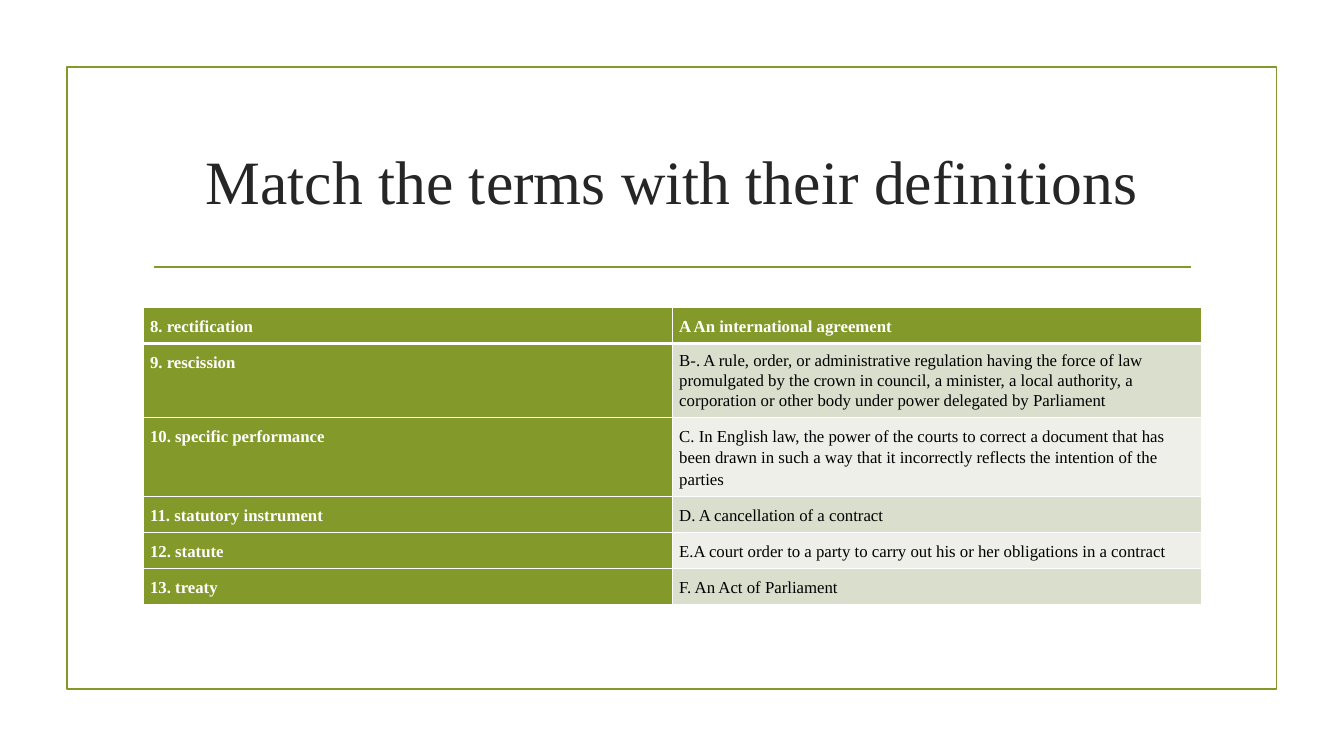
from dataclasses import dataclass

from lxml import etree
from pptx import Presentation
from pptx.dml.color import RGBColor
from pptx.enum.shapes import MSO_CONNECTOR, MSO_SHAPE
from pptx.enum.text import MSO_ANCHOR, MSO_AUTO_SIZE, PP_ALIGN
from pptx.oxml.ns import qn
from pptx.util import Pt

RECTANGLE = MSO_SHAPE.RECTANGLE
STRAIGHT = MSO_CONNECTOR.STRAIGHT
MIDDLE = MSO_ANCHOR.MIDDLE
TOP = MSO_ANCHOR.TOP
CENTER = PP_ALIGN.CENTER
LEFT = PP_ALIGN.LEFT
NO_AUTOFIT = MSO_AUTO_SIZE.NONE


@dataclass(frozen=True)
class Theme:
    font: str = "Times New Roman"
    title_size: float = 44
    cell_size: float = 12
    green: str = "83992A"
    title_ink: str = "262626"
    ink: str = "000000"
    white: str = "FFFFFF"
    bands: tuple[str, str] = ("EDEFE8", "D9DECD")
    rule_width: float = 1.25
    grid_width: float = 1
    header_rule_width: float = 3


@dataclass(frozen=True)
class Entry:
    term: str
    definition: str
    height: float = 25.9
    line_spacing: float = 1.15
    space_after: float = 0


THEME = Theme()
CONTENT_LEFT = 102.2
CONTENT_WIDTH = 756
CELL_MARGIN = 5

ENTRIES = (
    Entry("8. rectification", "A An international agreement", 25.5),
    Entry(
        "9. rescission",
        "B-. A rule, order, or administrative regulation having the force of law "
        "promulgated by the crown in council, a minister, a local authority, a "
        "corporation or other body under power delegated by Parliament",
        52.9, 1.07, 8,
    ),
    Entry(
        "10. specific performance",
        "C. In English law, the power of the courts to correct a document that has "
        "been drawn in such a way that it incorrectly reflects the intention of the "
        "parties",
        56.4,
    ),
    Entry("11. statutory instrument", "D. A cancellation of a contract"),
    Entry(
        "12. statute",
        "E.A court order to a party to carry out his or her obligations in a contract",
    ),
    Entry("13. treaty", "F. An Act of Parliament"),
)


def color(value: str) -> RGBColor:
    return RGBColor.from_string(value)


def style_font(para, size: float, ink: str, bold: bool = False) -> None:
    para.font.name = THEME.font
    para.font.size = Pt(size)
    para.font.bold = bold
    para.font.color.rgb = color(ink)


def style_line(line) -> None:
    line.color.rgb = color(THEME.green)
    line.width = Pt(THEME.rule_width)


def draw_frame(page) -> None:
    frame = page.shapes.add_shape(RECTANGLE, Pt(47.8), Pt(48), Pt(864), Pt(444))
    frame.shadow.inherit = False
    frame.fill.background()
    style_line(frame.line)


def draw_title_rule(page) -> None:
    rule = page.shapes.add_connector(STRAIGHT, Pt(110), Pt(190.8), Pt(850.5), Pt(190.8))
    style_line(rule.line)
    etree.SubElement(rule._element.spPr, qn("a:effectLst"))


def write_title(page) -> None:
    title = page.shapes.title
    title.left, title.top = Pt(CONTENT_LEFT), Pt(77)
    title.width, title.height = Pt(CONTENT_WIDTH), Pt(103)
    frame = title.text_frame
    frame.text = "Match the terms with their definitions"
    frame.word_wrap = True
    frame.auto_size = NO_AUTOFIT
    frame.vertical_anchor = MIDDLE
    para = frame.paragraphs[0]
    para.alignment = CENTER
    style_font(para, THEME.title_size, THEME.title_ink)


def add_borders(cell, top: float, bottom: float) -> None:
    properties = cell._tc.get_or_add_tcPr()
    widths = {"lnL": THEME.grid_width, "lnR": THEME.grid_width, "lnT": top, "lnB": bottom}
    for tag, width in widths.items():
        border = etree.SubElement(properties, qn(f"a:{tag}"), w=str(Pt(width)))
        fill = etree.SubElement(border, qn("a:solidFill"))
        etree.SubElement(fill, qn("a:srgbClr"), val=THEME.white)


def fill_cell(cell, text: str, entry: Entry, row: int, heading: bool) -> None:
    add_borders(
        cell,
        THEME.header_rule_width if row == 1 else THEME.grid_width,
        THEME.header_rule_width if row == 0 else THEME.grid_width,
    )
    cell.fill.solid()
    cell.fill.fore_color.rgb = color(THEME.green if heading else THEME.bands[row % 2])
    cell.margin_left = cell.margin_right = Pt(CELL_MARGIN)
    cell.margin_top = cell.margin_bottom = Pt(CELL_MARGIN)
    cell.vertical_anchor = TOP
    cell.text = text
    para = cell.text_frame.paragraphs[0]
    para.alignment = LEFT
    para.line_spacing = 1.15 if heading else entry.line_spacing
    para.space_after = Pt(0 if heading else entry.space_after)
    style_font(para, THEME.cell_size, THEME.white if heading else THEME.ink, heading)


def draw_terms(page) -> None:
    height = sum(entry.height for entry in ENTRIES)
    table = page.shapes.add_table(
        len(ENTRIES), 2, Pt(CONTENT_LEFT), Pt(219.8), Pt(CONTENT_WIDTH), Pt(height)
    ).table
    table.horz_banding = False
    for column in table.columns:
        column.width = Pt(CONTENT_WIDTH / 2)
    for row, entry in enumerate(ENTRIES):
        table.rows[row].height = Pt(entry.height)
        fill_cell(table.cell(row, 0), entry.term, entry, row, True)
        fill_cell(table.cell(row, 1), entry.definition, entry, row, row == 0)


def main() -> None:
    deck = Presentation()
    deck.slide_width, deck.slide_height = Pt(960), Pt(540)
    page = deck.slides.add_slide(deck.slide_layouts.get_by_name("Title Only"))
    page.background.fill.solid()
    page.background.fill.fore_color.rgb = color(THEME.white)
    draw_frame(page)
    draw_title_rule(page)
    write_title(page)
    draw_terms(page)
    deck.save("out.pptx")


if __name__ == "__main__":
    main()
